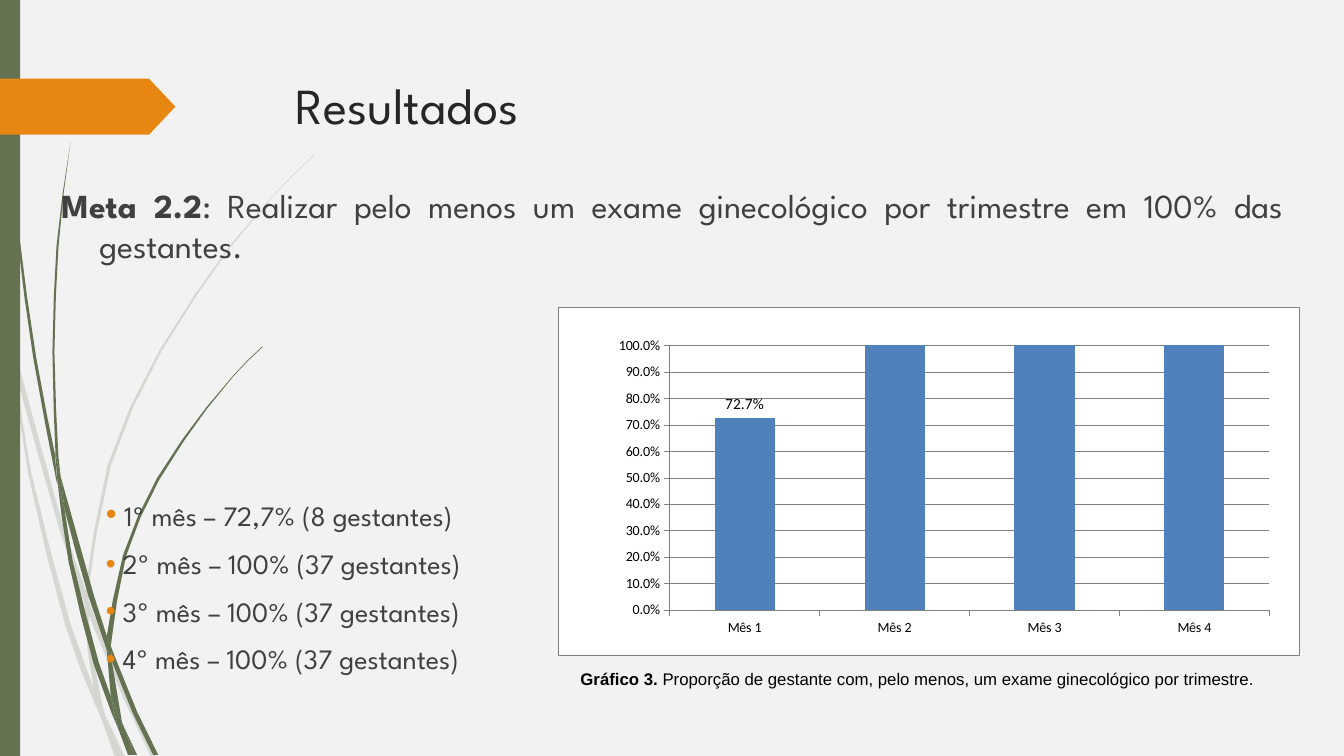
from lxml.etree import SubElement
from math import dist
from pptx import Presentation
from pptx.chart.data import CategoryChartData
from pptx.dml.color import RGBColor
from pptx.enum.chart import XL_CHART_TYPE, XL_LABEL_POSITION, XL_TICK_MARK
from pptx.enum.shapes import MSO_SHAPE
from pptx.enum.text import MSO_ANCHOR, MSO_AUTO_SIZE, PP_ALIGN
from pptx.oxml.ns import qn
from pptx.util import Pt

# Content
TITLE = "Resultados"
GOAL = [("Meta 2.2", True),
        (": Realizar pelo menos um exame ginecológico por trimestre em 100% das gestantes.", False)]
MONTHS = ["1º mês – 72,7% (8 gestantes)", "2º mês – 100% (37 gestantes)",
          "3º mês – 100% (37 gestantes)", "4º mês – 100% (37 gestantes)"]
CATS = ["Mês 1", "Mês 2", "Mês 3", "Mês 4"]
RATES = [0.727, 1, 1, 1]
CAPTION = [("Gráfico 3.", True),
           (" Proporção de gestante com, pelo menos, um exame ginecológico por trimestre.", False)]

# Colours and fonts
GREEN, ORANGE = RGBColor(0x64, 0x72, 0x52), RGBColor(0xE7, 0x87, 0x12)
DARK, TEXT = RGBColor(0x26, 0x26, 0x26), RGBColor(0x40, 0x40, 0x40)
GREY, BLUE = RGBColor(0x80, 0x80, 0x80), RGBColor(0x4F, 0x81, 0xBD)
PALE, WHITE, BLACK = RGBColor(0xF2, 0xF2, 0xF2), RGBColor(255, 255, 255), RGBColor(0, 0, 0)
SPARTAN = "League Spartan"

# Grass blades: two edges each, x and y in steps of 0.72 pt
STEP = Pt(0.72)
FAINT = [
    ([11, 350, 9, 322, 0, 282], [0, 299, 10, 344]),
    ([85, 586, 62, 520, 14, 345], [17, 376, 58, 522, 84, 599]),
    ([88, 610, 123, 694, 150, 751], [155, 751, 127, 692, 92, 607, 88, 596]),
    ([119, 751, 124, 751], [105, 711]),
    ([101, 714, 99, 707, 93, 683, 70, 619, 31, 469, 17, 376],
     [11, 350, 28, 470, 65, 621, 92, 693]),
    ([84, 599, 87, 646, 93, 683, 96, 692], [105, 711, 103, 706, 91, 646, 88, 610, 88, 608]),
    ([88, 596, 88, 584, 110, 462, 160, 349, 229, 245, 268, 198, 290, 175, 312, 154],
     [312, 153, 289, 175, 268, 197, 228, 244, 158, 348, 107, 461, 85, 584, 85, 586]),
    ([101, 714, 114, 751], [119, 751]),
    ([88, 608, 88, 610, 88, 596], [85, 586, 84, 599]),
    ([93, 683, 99, 707, 101, 714], [119, 751, 105, 711, 96, 692]),
]
SOLID = [
    ([3, 0, 4, 48, 7, 110, 17, 233, 33, 355, 56, 477, 57, 481],
     [55, 457, 55, 453, 36, 355, 19, 232, 8, 109, 5, 48, 4, 0]),
    ([60, 472, 64, 505, 88, 592, 106, 645], [106, 633, 106, 631, 93, 590]),
    ([110, 641, 111, 656, 132, 708, 152, 749], [157, 749, 136, 706, 113, 649]),
    ([57, 477, 68, 557, 93, 659, 111, 708], [117, 722, 116, 717, 110, 691, 98, 657, 72, 556, 64, 505]),
    ([60, 472, 58, 453, 54, 349, 58, 245, 63, 193],
     [70, 141, 62, 193, 56, 245, 52, 349, 55, 449]),
    ([122, 719, 133, 749], [136, 749]),
    ([55, 449, 60, 472], [64, 505, 57, 477, 55, 453]),
    ([110, 641, 111, 633, 125, 552, 158, 476, 205, 406, 231, 374, 245, 359, 261, 344],
     [260, 344, 245, 358, 231, 373, 204, 405, 156, 474, 122, 551, 106, 631]),
    ([117, 722, 127, 749], [131, 749]),
    ([106, 645, 110, 691, 116, 706], [122, 719, 121, 716, 111, 656, 109, 651]),
    ([106, 645, 109, 651, 111, 656], [110, 641, 106, 631, 106, 633]),
    ([110, 691, 116, 717, 117, 722, 130, 749], [133, 749, 122, 719, 116, 706]),
]


def smooth(flat):
    """Edge points, with a curved midpoint added on each long span."""
    pts = list(zip(flat[::2], flat[1::2]))
    ends = pts[:1] + pts + pts[-1:]
    out = pts[:1]
    for a, b, c, d in zip(ends, ends[1:], ends[2:], ends[3:]):
        if dist(b, c) > 70:
            out.append(tuple((9 * (q + r) - p - s) / 16 for p, q, r, s in zip(a, b, c, d)))
        out.append(c)
    return [(x * STEP, y * STEP) for x, y in out]


def paint(shape, color, alpha=None):
    shape.shadow.inherit = False
    shape.fill.solid()
    shape.fill.fore_color.rgb = color
    shape.line.fill.background()
    if alpha:
        tone = shape._element.spPr.find(qn("a:solidFill"))[0]
        SubElement(tone, qn("a:alpha"), val=str(alpha * 1000))


def grass(blades, alpha=None):
    group = shapes.add_group_shape()
    for one, two in blades:
        pts = smooth(one) + smooth(two)
        pen = group.shapes.build_freeform(*pts[0], scale=1.0)
        pen.add_line_segments(pts[1:], close=True)
        paint(pen.convert_to_shape(), GREEN, alpha)


def style(font, size, color, name):
    font.size, font.name, font.color.rgb = Pt(size), name, color


def write(para, text, size, color, name, bold=False):
    run = para.add_run()
    run.text, run.font.bold = text, bold
    style(run.font, size, color, name)


def place(shape, x, y, w, h):
    shape.left, shape.top, shape.width, shape.height = Pt(x), Pt(y), Pt(w), Pt(h)
    frame = shape.text_frame
    frame.word_wrap, frame.auto_size = True, MSO_AUTO_SIZE.NONE
    frame.vertical_anchor = MSO_ANCHOR.TOP
    return frame


def indent(para, left, first, before):
    para.alignment, para.space_before = PP_ALIGN.JUSTIFY, Pt(before)
    props = para._p.get_or_add_pPr()
    props.set("marL", str(Pt(left)))
    props.set("indent", str(Pt(first)))
    return props


def hair(line):
    line.color.rgb, line.width = GREY, Pt(0.25)


# Slide, grass, side bar and arrow tab
deck = Presentation()
deck.slide_width, deck.slide_height = Pt(960), Pt(540)
slide = deck.slides.add_slide(deck.slide_layouts[1])
slide.background.fill.solid()
slide.background.fill.fore_color.rgb = PALE
shapes = slide.shapes
title, body = shapes.title, slide.placeholders[1]
grass(FAINT, 20)
grass(SOLID)
paint(shapes.add_shape(MSO_SHAPE.RECTANGLE, 0, 0, Pt(14.4), Pt(540)), GREEN)
tab = shapes.add_shape(MSO_SHAPE.PENTAGON, 0, Pt(56.2), Pt(125.3), Pt(40))
tab.adjustments[0] = 0.47
paint(tab, ORANGE)

# Title and body, in front of the grass
for holder in (title, body):
    shapes._spTree.append(holder._element)
para = place(title, 204.2, 49, 702, 100.8).paragraphs[0]
para.alignment = PP_ALIGN.LEFT
write(para, TITLE, 36, DARK, SPARTAN)
frame = place(body, 36.7, 128.4, 887, 357.8)
para = frame.paragraphs[0]
SubElement(indent(para, 27, -27, 10), qn("a:buNone"))
for text, bold in GOAL:
    write(para, text, 24, TEXT, SPARTAN, bold)
for n, month in enumerate(MONTHS):
    para = frame.add_paragraph()
    para.level = 1
    props = indent(para, 31.7, 0, 10 if n else 164.4)
    SubElement(SubElement(props, qn("a:buClr")), qn("a:srgbClr"), val=str(ORANGE))
    SubElement(props, qn("a:buFont"), typeface="Arial")
    SubElement(props, qn("a:buChar"), char="•")
    write(para, " ", 20 if n else 22, TEXT, SPARTAN)
    write(para, month, 20, TEXT, SPARTAN)

# Chart
data = CategoryChartData(number_format="0.0%")
data.categories = CATS
data.add_series("Series 1", RATES)
chart = shapes.add_chart(XL_CHART_TYPE.COLUMN_CLUSTERED, Pt(398.9), Pt(219.2),
                         Pt(529.2), Pt(249.1), data).chart
chart.has_legend = chart.has_title = False
style(chart.font, 11, BLACK, "Calibri")
plot = chart.plots[0]
plot.gap_width, plot.vary_by_categories = 150, False
bars = plot.series[0]
bars.format.fill.solid()
bars.format.fill.fore_color.rgb = BLUE
bars.data_labels.show_value = False
label = bars.points[0].data_label
label.position = XL_LABEL_POSITION.OUTSIDE_END
style(label.font, 11, BLACK, "Calibri")
rates = chart.value_axis
for axis in (chart.category_axis, rates):
    axis.major_tick_mark = XL_TICK_MARK.OUTSIDE
    style(axis.tick_labels.font, 10, BLACK, "Calibri")
    hair(axis.format.line)
rates.minimum_scale, rates.maximum_scale, rates.major_unit = 0, 1, 0.1
hair(rates.major_gridlines.format.line)

# Plot position and chart frame
root = chart._chartSpace
area = root.chart.plotArea
for old in area.findall(qn("c:layout")):
    area.remove(old)
area.insert(0, area.makeelement(qn("c:layout")))
manual = SubElement(area[0], qn("c:manualLayout"))
for key, val in [("layoutTarget", "inner"), ("xMode", "edge"), ("yMode", "edge"),
                 ("x", "0.15"), ("y", "0.11"), ("w", "0.81"), ("h", "0.76")]:
    SubElement(manual, qn("c:" + key), val=val)
box = root.makeelement(qn("c:spPr"))
root.chart.addnext(box)
SubElement(SubElement(box, qn("a:solidFill")), qn("a:srgbClr"), val=str(WHITE))
edge = SubElement(box, qn("a:ln"), w=str(Pt(0.25)))
SubElement(SubElement(edge, qn("a:solidFill")), qn("a:srgbClr"), val=str(GREY))

# Caption
para = place(shapes.add_textbox(0, 0, 0, 0), 407.5, 474.5, 534.2, 21.6).paragraphs[0]
for text, bold in CAPTION:
    write(para, text, 12, BLACK, "Arial", bold)
deck.save("out.pptx")
